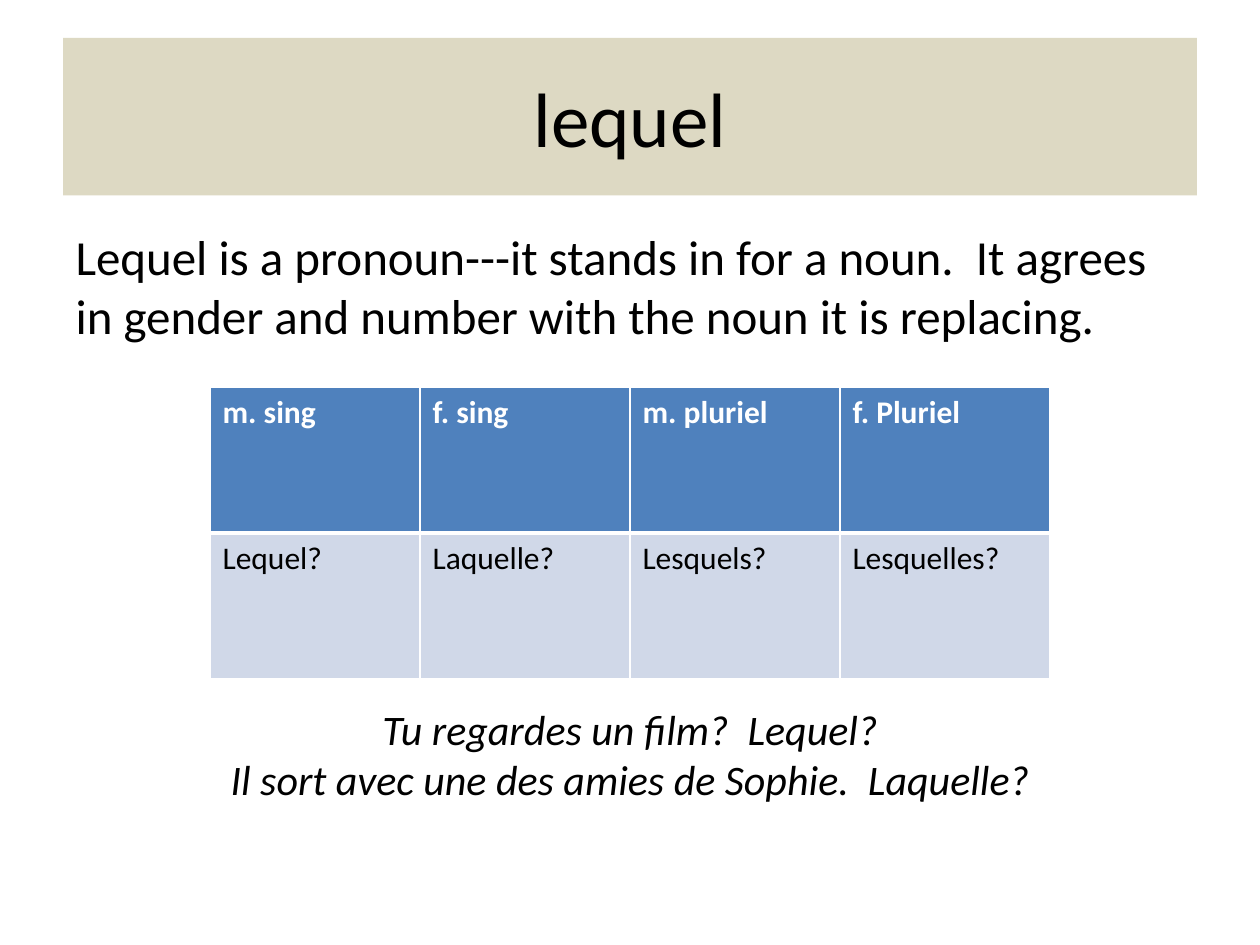
"""Build a slide that explains the French pronoun lequel."""
from dataclasses import dataclass

import lxml.etree
import pptx
import pptx.dml.color
import pptx.enum.text
import pptx.oxml.ns
import pptx.util

RGBColor = pptx.dml.color.RGBColor
Pt = pptx.util.Pt
BLACK = RGBColor(0x00, 0x00, 0x00)
WHITE = RGBColor(0xFF, 0xFF, 0xFF)
TAN = RGBColor(0xDD, 0xD9, 0xC3)
BLUE = RGBColor(0x4F, 0x81, 0xBD)
PALE_BLUE = RGBColor(0xD0, 0xD8, 0xE8)
FONT = "Calibri"
CENTER = pptx.enum.text.PP_ALIGN.CENTER
LEFT = pptx.enum.text.PP_ALIGN.LEFT
WIDTH, HEIGHT = pptx.util.Inches(10), pptx.util.Inches(7.5)


@dataclass(frozen=True)
class Box:
    """Left, top, width and height as shares of the slide."""
    left: float
    top: float
    width: float
    height: float

    def emu(self) -> dict[str, int]:
        """Return the box as lengths on the slide."""
        return {"left": round(self.left * WIDTH), "top": round(self.top * HEIGHT),
                "width": round(self.width * WIDTH), "height": round(self.height * HEIGHT)}


@dataclass(frozen=True)
class Row:
    """Wording, format and border widths of a table row."""
    words: tuple[str, ...]
    fill: RGBColor
    color: RGBColor
    bold: bool
    borders: dict[str, float]


TITLE_BOX = Box(1 / 20, 1 / 25, 9 / 10, 1 / 6)
BODY_BOX = Box(1 / 20, 7 / 30, 9 / 10, 0.66)
TABLE_BOX = Box(1 / 6, 0.41, 2 / 3, 0.308)
ROWS = (
    Row(("m. sing", "f. sing", "m. pluriel", "f. Pluriel"), BLUE, WHITE, True,
        {"L": 1, "R": 1, "T": 1, "B": 3}),
    Row(("Lequel?", "Laquelle?", "Lesquels?", "Lesquelles?"), PALE_BLUE, BLACK, False,
        {"L": 1, "R": 1, "T": 3, "B": 1}),
)


def apply(obj, values: dict) -> None:
    """Set attributes from a dict of format values."""
    for name, value in values.items():
        setattr(obj, name, value)


def write(p, text: str, size: float, color: RGBColor = BLACK, align=LEFT, **font) -> None:
    """Write formatted text into a paragraph."""
    p.text = text
    p.alignment = align
    for r in p.runs:
        apply(r.font, {"name": FONT, "size": Pt(size), **font})
        r.font.color.rgb = color


def remove_bullet(p) -> None:
    """Remove the bullet and the hanging indent of a paragraph."""
    pPr = p._p.get_or_add_pPr()
    pPr.set("marL", "0")
    pPr.set("indent", "0")
    lxml.etree.SubElement(pPr, pptx.oxml.ns.qn("a:buNone"))


def set_borders(cell, borders: dict[str, float]) -> None:
    """Draw white borders of the given widths around a cell."""
    tcPr = cell._tc.get_or_add_tcPr()
    qn = pptx.oxml.ns.qn
    for i, (side, width) in enumerate(borders.items()):
        ln = lxml.etree.Element(qn(f"a:ln{side}"), w=str(Pt(width)))
        fill = lxml.etree.SubElement(ln, qn("a:solidFill"))
        lxml.etree.SubElement(fill, qn("a:srgbClr"), val=str(WHITE))
        tcPr.insert(i, ln)


def add_title(s) -> None:
    """Fill the title placeholder."""
    sp = s.shapes.title
    apply(sp, TITLE_BOX.emu())
    sp.fill.solid()
    sp.fill.fore_color.rgb = TAN
    write(sp.text_frame.paragraphs[0], "lequel", 44, align=CENTER)


def add_body(s) -> None:
    """Fill the body placeholder with the rule and the examples."""
    sp = s.placeholders[1]
    apply(sp, BODY_BOX.emu())
    tf = sp.text_frame
    tf.auto_size = pptx.enum.text.MSO_AUTO_SIZE.NONE
    rule, examples = tf.paragraphs[0], tf.add_paragraph()
    write(rule, "Lequel is a pronoun---it stands in for a noun.  It agrees "
                "in gender and number with the noun it is replacing.", 28)
    write(examples, "Tu regardes un film?  Lequel?\v"
                    "Il sort avec une des amies de Sophie.  Laquelle?",
          24, align=CENTER, italic=True)
    examples.space_before = Pt(205)
    for p in (rule, examples):
        remove_bullet(p)


def add_forms(s) -> None:
    """Add the table of forms by gender and number."""
    table = s.shapes.add_table(len(ROWS), len(ROWS[0].words), **TABLE_BOX.emu()).table
    for r, row in enumerate(ROWS):
        for c, word in enumerate(row.words):
            cell = table.cell(r, c)
            cell.fill.solid()
            cell.fill.fore_color.rgb = row.fill
            write(cell.text_frame.paragraphs[0], word, 18, row.color, bold=row.bold)
            set_borders(cell, row.borders)


def main() -> None:
    """Build and save the slide."""
    prs = pptx.Presentation()
    apply(prs, {"slide_width": WIDTH, "slide_height": HEIGHT})
    s = prs.slides.add_slide(prs.slide_layouts[1])
    add_title(s)
    add_body(s)
    add_forms(s)
    prs.save("out.pptx")


if __name__ == "__main__":
    main()
